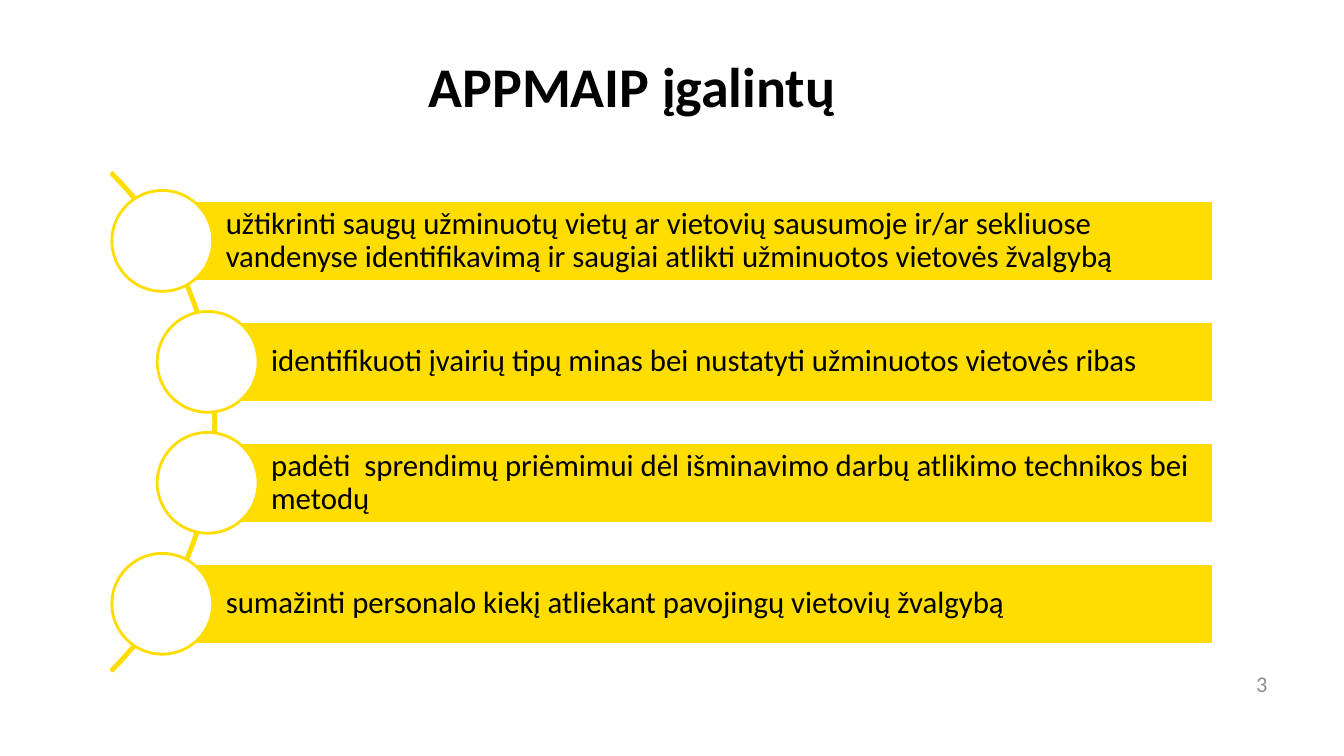
"""Build the slide listing what APPMAIP would enable."""
from pptx import Presentation
from pptx.dml.color import RGBColor
from pptx.enum.shapes import MSO_SHAPE
from pptx.enum.text import MSO_ANCHOR, PP_ALIGN
from pptx.util import Inches, Pt

TITLE = "APPMAIP įgalintų"
PAGE = "3"
GOALS = [
    (1.61, "užtikrinti saugų užminuotų vietų ar vietovių sausumoje ir/ar sekliuose "
           "vandenyse identifikavimą ir saugiai atlikti užminuotos vietovės žvalgybą"),
    (2.06, "identifikuoti įvairių tipų minas bei nustatyti užminuotos vietovės ribas"),
    (2.06, "padėti  sprendimų priėmimui dėl išminavimo darbų atlikimo technikos bei metodų"),
    (1.61, "sumažinti personalo kiekį atliekant pavojingų vietovių žvalgybą"),
]
YELLOW, WHITE, BLACK, GRAY = "FFDD00", "FFFFFF", "000000", "8C8C8C"
BAR_TOP, BAR_STEP, BAR_HEIGHT, BAR_RIGHT = 1.99, 1.2, 0.8, 12.04
CIRCLE = 1
GOAL_FRAME = {"margin_left": Inches(0.63), "margin_right": Inches(0.06),
              "margin_top": Inches(0.06), "margin_bottom": Inches(0.06)}


def rgb(value):
    return RGBColor.from_string(value)


def add_shape(s, kind, box, fill, line):
    sp = s.shapes.add_shape(kind, *map(Inches, box))
    sp.shadow.inherit = False
    if fill:
        sp.fill.solid()
        sp.fill.fore_color.rgb = rgb(fill)
    else:
        sp.fill.background()
    sp.line.color.rgb = rgb(line)
    sp.line.width = Pt(2)
    return sp


def write(sp, text, size, color, align, bold=False, frame=None):
    tf = sp.text_frame
    settings = {"word_wrap": True, "vertical_anchor": MSO_ANCHOR.MIDDLE, **(frame or {})}
    for name, value in settings.items():
        setattr(tf, name, value)
    p = tf.paragraphs[0]
    p.alignment = align
    r = p.add_run()
    r.text = text
    for name, value in {"name": "Calibri", "size": Pt(size), "bold": bold}.items():
        setattr(r.font, name, value)
    r.font.color.rgb = rgb(color)
    return p


def main():
    prs = Presentation()
    prs.slide_width, prs.slide_height = Inches(13.33), Inches(7.5)
    s = prs.slides.add_slide(prs.slide_layouts[5])

    title = s.shapes.title
    place = {"left": 0.34, "top": 0.26, "width": 11.86, "height": 1.17}
    for name, value in place.items():
        setattr(title, name, Inches(value))
    write(title, TITLE, 40, BLACK, PP_ALIGN.CENTER, bold=True)

    number = s.shapes.add_textbox(*map(Inches, (9.56, 6.58, 3.11, 0.4)))
    write(number, PAGE, 16, GRAY, PP_ALIGN.RIGHT)

    arc = add_shape(s, MSO_SHAPE.BLOCK_ARC, (-4.85, 0.69, 6.99, 6.99), None, YELLOW)
    for i, value in enumerate((189, 27, 0.003)):
        arc.adjustments[i] = value

    for i, (left, goal) in enumerate(GOALS):
        top = BAR_TOP + i * BAR_STEP
        bar = add_shape(s, MSO_SHAPE.RECTANGLE,
                        (left, top, BAR_RIGHT - left, BAR_HEIGHT), YELLOW, WHITE)
        p = write(bar, goal, 22, BLACK, PP_ALIGN.LEFT, frame=GOAL_FRAME)
        p.line_spacing = 0.9
        add_shape(s, MSO_SHAPE.OVAL,
                  (left - CIRCLE / 2, top + (BAR_HEIGHT - CIRCLE) / 2, CIRCLE, CIRCLE),
                  WHITE, YELLOW)

    prs.save("out.pptx")


if __name__ == "__main__":
    main()
